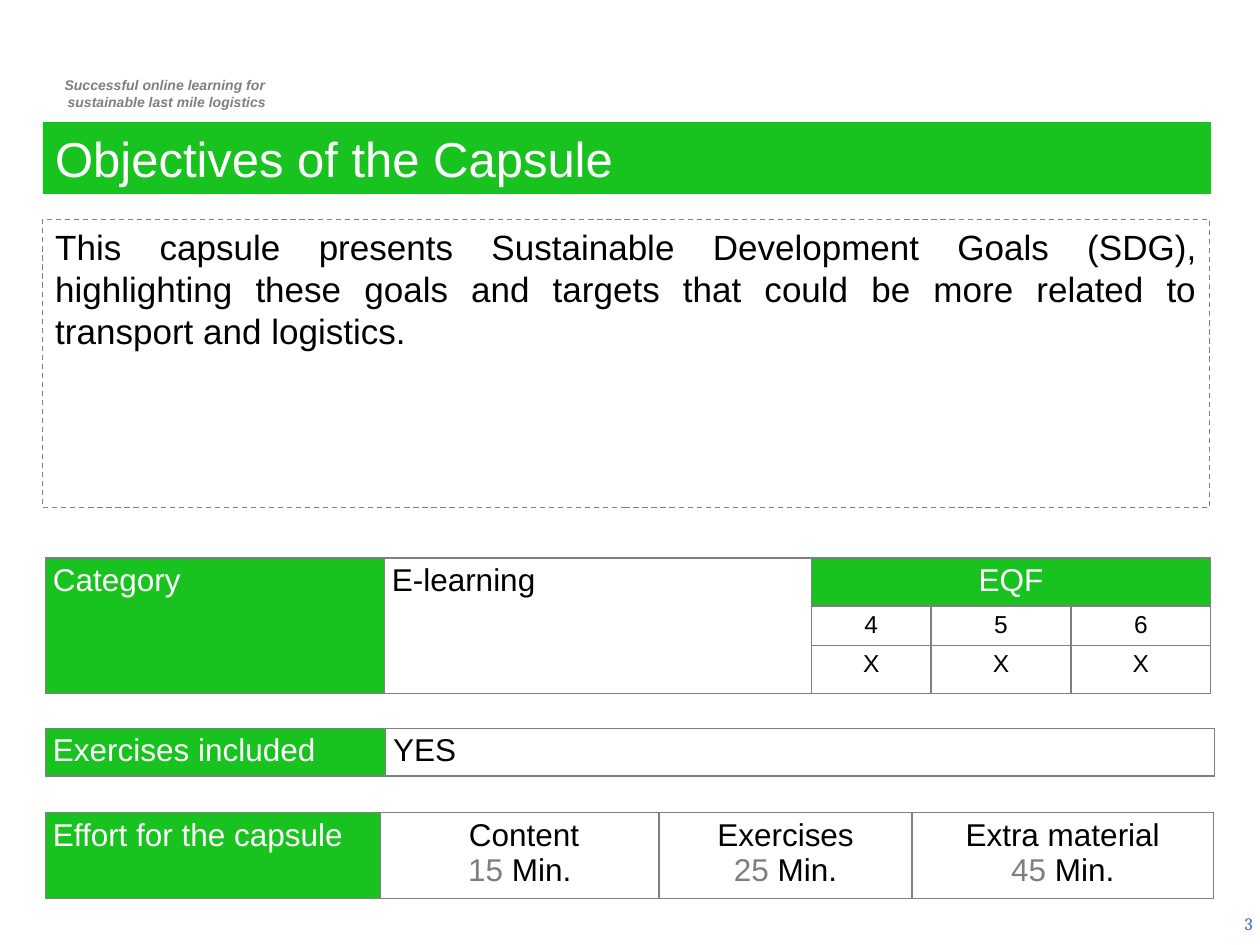
"""Build the capsule objectives slide with its three information tables."""
from lxml import etree
from pptx import Presentation
from pptx.dml.color import RGBColor
from pptx.enum import dml, shapes, text
from pptx.oxml import ns
from pptx.util import Inches, Pt

COLORS = {"green": "18C320", "gray": "7F7F7F", "white": "FFFFFF", "black": "000000", "blue": "3366CC"}
LEFT, CENTER, RIGHT, JUSTIFY = (
    text.PP_ALIGN.LEFT, text.PP_ALIGN.CENTER, text.PP_ALIGN.RIGHT, text.PP_ALIGN.JUSTIFY)


def write(frame, paragraphs, size, align, **formats):
    """Fill a text frame with paragraphs made of (wording, colour) runs."""
    frame.word_wrap = True
    for index, runs in enumerate(paragraphs):
        paragraph = frame.paragraphs[0] if index == 0 else frame.add_paragraph()
        paragraph.alignment = align
        for wording, color in runs:
            run = paragraph.add_run()
            run.text = wording
            run.font.color.rgb = RGBColor.from_string(COLORS[color])
            for name, value in {"size": Pt(size), "name": "Arial", **formats}.items():
                setattr(run.font, name, value)


def add_grid(slide, top, widths, heights, cells, merges=()):
    """Add a bordered table; cells maps (row, column) to paragraphs, size, alignment, fill."""
    grid = slide.shapes.add_table(
        len(heights), len(widths), Inches(0.36), Inches(top),
        Inches(sum(widths)), Inches(sum(heights))).table
    grid.first_row = grid.horz_banding = False
    for column, width in zip(grid.columns, widths):
        column.width = Inches(width)
    for row, height in zip(grid.rows, heights):
        row.height = Inches(height)
    for start, end in merges:
        grid.cell(*start).merge(grid.cell(*end))
    for cell in grid.iter_cells():
        cell.fill.background()
        cell.margin_left = cell.margin_right = Inches(0.06)
        cell.margin_top = cell.margin_bottom = Inches(0.04)
        properties = cell._tc.get_or_add_tcPr()
        for index, side in enumerate(("lnL", "lnR", "lnT", "lnB")):
            border = etree.Element(ns.qn(f"a:{side}"), w=str(Pt(1)))
            solid = etree.SubElement(border, ns.qn("a:solidFill"))
            etree.SubElement(solid, ns.qn("a:srgbClr"), val=COLORS["gray"])
            properties.insert(index, border)
    for place, (paragraphs, size, align, fill) in cells.items():
        cell = grid.cell(*place)
        write(cell.text_frame, paragraphs, size, align)
        if fill:
            cell.fill.solid()
            cell.fill.fore_color.rgb = RGBColor.from_string(COLORS[fill])


deck = Presentation()
deck.slide_width, deck.slide_height = Inches(10), Inches(7.5)
slide = deck.slides.add_slide(deck.slide_layouts[6])

tagline = slide.shapes.add_textbox(Inches(0.29), Inches(0.56), Inches(2.03), Inches(0.37))
write(tagline.text_frame,
      [[("Successful online learning for ", "gray")], [("sustainable last mile logistics", "gray")]],
      8, CENTER, bold=True, italic=True)
for paragraph in tagline.text_frame.paragraphs:
    paragraph._p.get_or_add_pPr().set("marL", str(Inches(0.04)))

page_number = slide.shapes.add_textbox(Inches(7.71), Inches(7.13), Inches(2.33), Inches(0.4))
page_number.text_frame.vertical_anchor = text.MSO_ANCHOR.MIDDLE
write(page_number.text_frame, [[("3", "blue")]], 10, RIGHT, name="Cambria")

title = slide.shapes.add_shape(
    shapes.MSO_SHAPE.RECTANGLE, Inches(0.34), Inches(0.97), Inches(9.27), Inches(0.57))
title.fill.solid()
title.fill.fore_color.rgb = RGBColor.from_string(COLORS["green"])
title.line.fill.background()
write(title.text_frame, [[("Objectives of the Capsule", "white")]], 28, LEFT)

objective = slide.shapes.add_shape(
    shapes.MSO_SHAPE.RECTANGLE, Inches(0.34), Inches(1.74), Inches(9.26), Inches(2.29))
objective.fill.background()
objective.line.color.rgb = RGBColor.from_string(COLORS["gray"])
objective.line.width = Pt(0.75)
objective.line.dash_style = dml.MSO_LINE.DASH
write(objective.text_frame, [[(
    "This capsule presents Sustainable Development Goals (SDG), highlighting these goals "
    "and targets that could be more related to transport and logistics.", "black")]], 20, JUSTIFY)

for panel in (title, objective):
    panel.shadow.inherit = False
    panel.text_frame.vertical_anchor = text.MSO_ANCHOR.TOP

category = {
    (0, 0): ([[("Category", "white")]], 18, JUSTIFY, "green"),
    (0, 1): ([[("E-learning", "black")]], 18, JUSTIFY, None),
    (0, 2): ([[("EQF", "white")]], 18, CENTER, "green"),
}
for column, level in enumerate("456", start=2):
    for row, mark in enumerate((level, "X"), start=1):
        category[row, column] = ([[(mark, "black")]], 14, CENTER, None)
add_grid(slide, 4.43, [2.69, 3.39, 0.95, 1.11, 1.11], [0.37, 0.31, 0.37], category,
         [((0, 0), (2, 0)), ((0, 1), (2, 1)), ((0, 2), (0, 4))])

add_grid(slide, 5.78, [2.7, 6.58], [0.37], {
    (0, 0): ([[("Exercises included", "white")]], 18, JUSTIFY, "green"),
    (0, 1): ([[("YES", "black")]], 18, JUSTIFY, None),
})

effort = {(0, 0): ([[("Effort for the capsule", "white")]], 18, JUSTIFY, "green")}
durations = [(" Content", 15), ("Exercises", 25), ("Extra material", 45)]
for column, (part, minutes) in enumerate(durations, start=1):
    effort[0, column] = (
        [[(part, "black")], [(f"{minutes} ", "gray"), ("Min.", "black")]], 18, CENTER, None)
add_grid(slide, 6.45, [2.66, 2.21, 2.01, 2.39], [0.67], effort)

deck.save("out.pptx")
